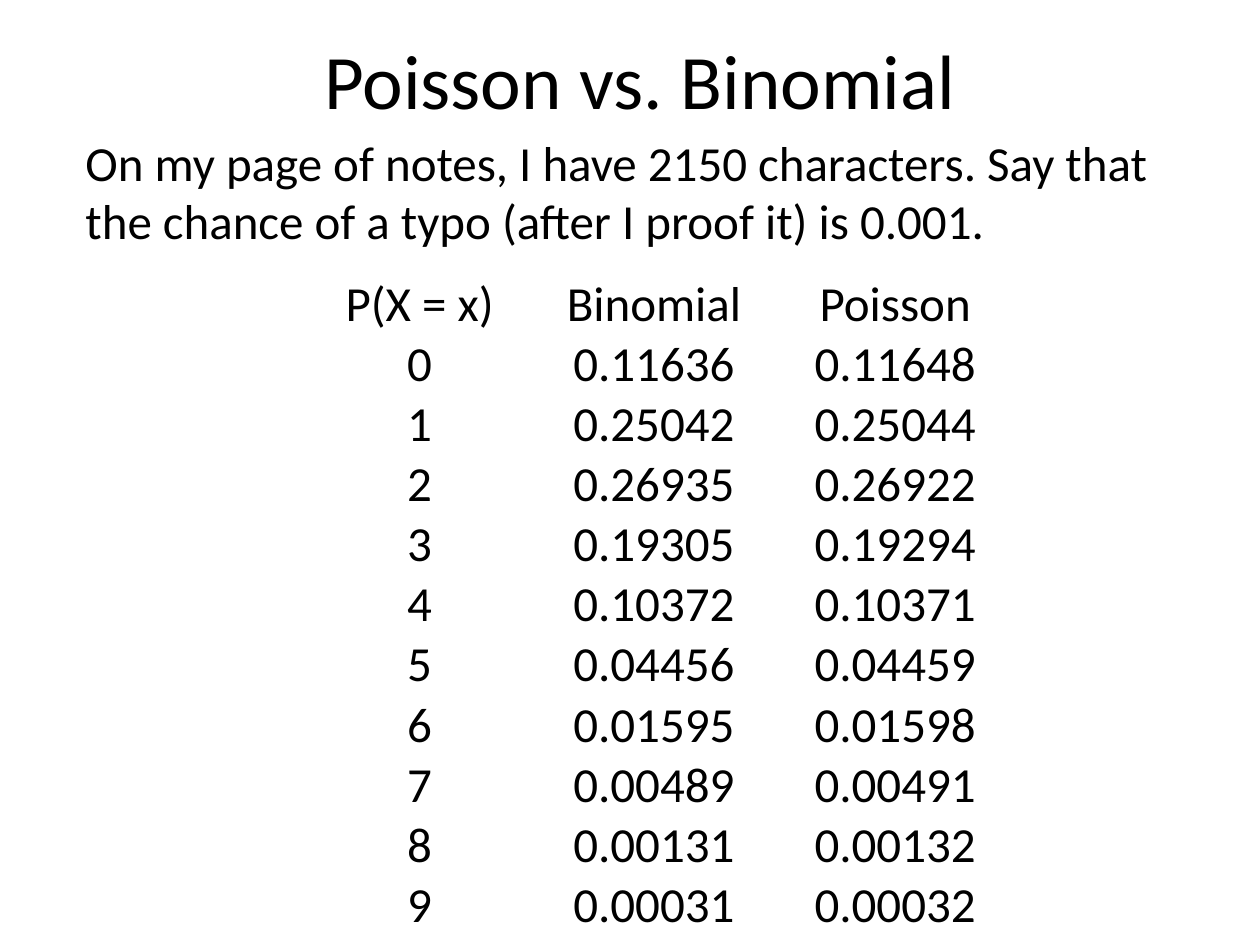
"""Build a slide comparing Poisson and binomial probabilities."""
from dataclasses import dataclass

import pptx
import pptx.dml.color
import pptx.enum.text
import pptx.oxml
import pptx.oxml.ns
import pptx.util

Inches = pptx.util.Inches
Align = pptx.enum.text.PP_ALIGN
Anchor = pptx.enum.text.MSO_ANCHOR

FONT = "Calibri"
BLACK = "000000"
WHITE = "FFFFFF"
BODY_SIZE = 28
ROW_HEIGHT = 0.42
COLUMN_WIDTHS = (1.5, 2.22, 1.61)
ROWS = (
    ("P(X = x)", "Binomial", "Poisson"),
    ("0", "0.11636", "0.11648"),
    ("1", "0.25042", "0.25044"),
    ("2", "0.26935", "0.26922"),
    ("3", "0.19305", "0.19294"),
    ("4", "0.10372", "0.10371"),
    ("5", "0.04456", "0.04459"),
    ("6", "0.01595", "0.01598"),
    ("7", "0.00489", "0.00491"),
    ("8", "0.00131", "0.00132"),
    ("9", "0.00031", "0.00032"),
)


@dataclass(frozen=True)
class TextBlock:
    left: float
    top: float
    width: float
    height: float
    lines: tuple[str, ...]
    size: int
    align: Align
    anchor: Anchor
    wrap: bool
    hanging: float = 0


TEXT_BLOCKS = (
    TextBlock(0.58, 0, 9, 1.25, ("Poisson vs. Binomial",), 44,
              Align.CENTER, Anchor.MIDDLE, True),
    TextBlock(0.58, 1, 8.81, 1.04,
              ("On my page of notes, I have 2150 characters. Say that",
               "the chance of a typo (after I proof it) is 0.001."),
              BODY_SIZE, Align.LEFT, Anchor.TOP, False, 0.56),
)


def rgb(color: str) -> pptx.dml.color.RGBColor:
    return pptx.dml.color.RGBColor.from_string(color)


def add_run(p, text: str, size: int, align: Align) -> None:
    p.alignment = align
    r = p.add_run()
    r.text = text
    r.font.name = FONT
    r.font.size = pptx.util.Pt(size)
    r.font.color.rgb = rgb(BLACK)


def add_text(s, block: TextBlock) -> None:
    sp = s.shapes.add_textbox(Inches(block.left), Inches(block.top),
                              Inches(block.width), Inches(block.height))
    tf = sp.text_frame
    tf.word_wrap = block.wrap
    tf.vertical_anchor = block.anchor
    for i, line in enumerate(block.lines):
        p = tf.add_paragraph() if i else tf.paragraphs[0]
        add_run(p, line, block.size, block.align)
        if block.hanging:
            p_pr = p._p.get_or_add_pPr()
            p_pr.set("marL", str(Inches(block.hanging)))
            p_pr.set("indent", str(-Inches(block.hanging)))


def set_borders(cell, color: str, width: float) -> None:
    tc_pr = cell._tc.get_or_add_tcPr()
    for i, side in enumerate(("lnL", "lnR", "lnT", "lnB")):
        tc_pr.insert(i, pptx.oxml.parse_xml(
            f'<a:{side} {pptx.oxml.ns.nsdecls("a")} w="{pptx.util.Pt(width)}">'
            f'<a:solidFill><a:srgbClr val="{color}"/></a:solidFill></a:{side}>'))


def add_probabilities(s, left: float, top: float) -> None:
    table = s.shapes.add_table(
        len(ROWS), len(COLUMN_WIDTHS), Inches(left), Inches(top),
        Inches(sum(COLUMN_WIDTHS)), Inches(ROW_HEIGHT * len(ROWS))).table
    table.first_row = table.horz_banding = False
    for column, width in zip(table.columns, COLUMN_WIDTHS):
        column.width = Inches(width)
    for row, values in zip(table.rows, ROWS):
        row.height = Inches(ROW_HEIGHT)
        for cell, value in zip(row.cells, values):
            cell.margin_left = cell.margin_right = cell.margin_top = Inches(0.01)
            cell.margin_bottom = Inches(0)
            cell.vertical_anchor = Anchor.BOTTOM
            cell.fill.background()
            set_borders(cell, WHITE, 1)
            add_run(cell.text_frame.paragraphs[0], value, BODY_SIZE, Align.CENTER)


def main() -> None:
    prs = pptx.Presentation()
    prs.slide_width, prs.slide_height = Inches(10), Inches(7.5)
    s = prs.slides.add_slide(prs.slide_layouts[6])
    title, intro = TEXT_BLOCKS
    add_text(s, title)
    add_probabilities(s, 2.58, 2.17)
    add_text(s, intro)
    prs.save("out.pptx")


if __name__ == "__main__":
    main()
